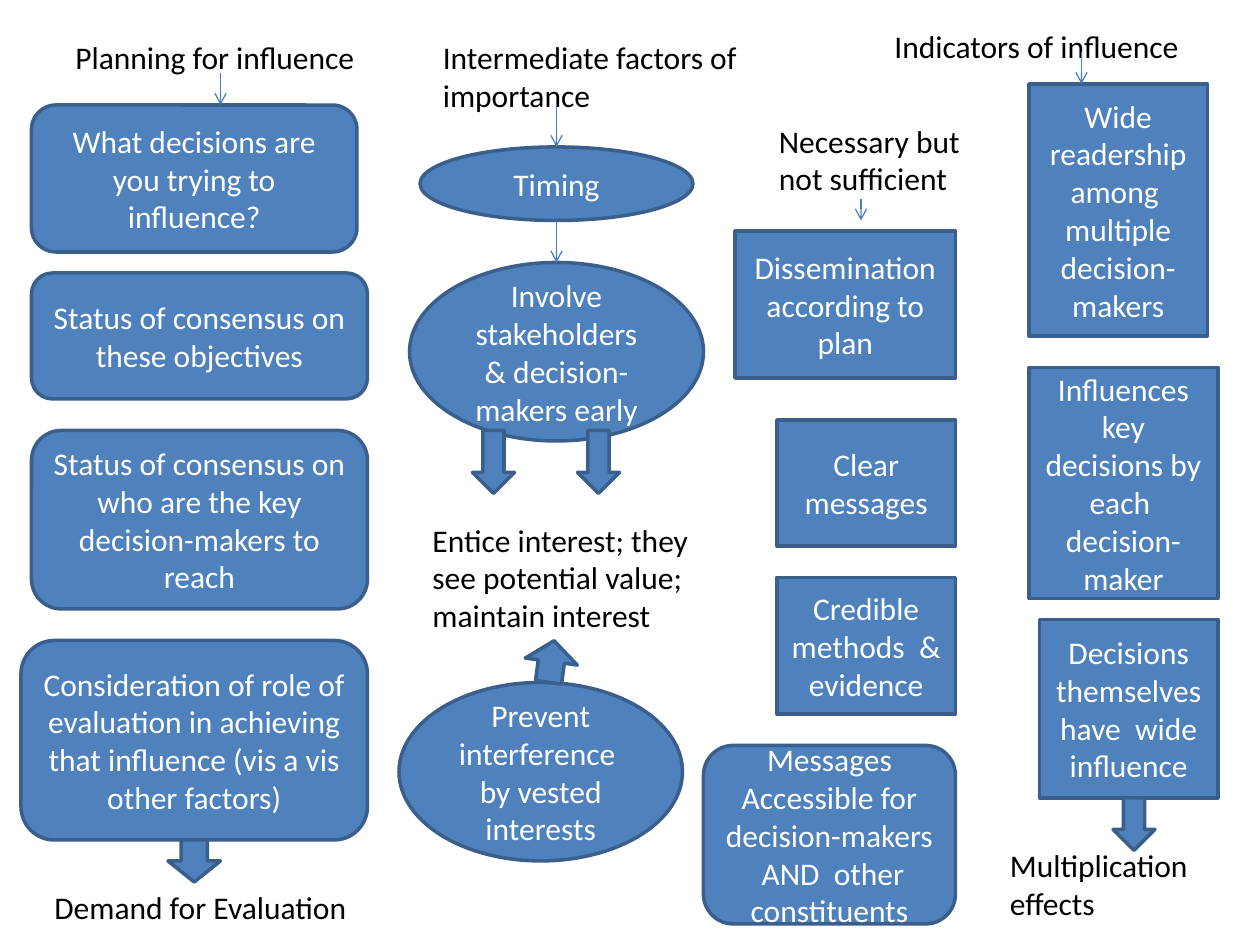
"""Build a one-slide map of how evaluations gain influence, from planning to indicators."""
from lxml.etree import SubElement
from pptx import Presentation
from pptx.dml.color import RGBColor
from pptx.enum.shapes import MSO_CONNECTOR, MSO_SHAPE
from pptx.enum.text import MSO_ANCHOR, MSO_AUTO_SIZE, PP_ALIGN
from pptx.oxml.ns import qn
from pptx.util import Pt

PX = 9525
FONT, TEXT_SIZE = "Calibri", Pt(18)
BLUE = RGBColor(0x4F, 0x81, 0xBD)
OUTLINE = RGBColor(0x3A, 0x5F, 0x8C)
ARROW_LINE = RGBColor(0x4B, 0x7E, 0xBC)
WHITE = RGBColor(0xFF, 0xFF, 0xFF)
BLACK = RGBColor(0, 0, 0)

RECT, ROUND, OVAL = MSO_SHAPE.RECTANGLE, MSO_SHAPE.ROUNDED_RECTANGLE, MSO_SHAPE.OVAL
FACTORS = [
    (ROUND, (24, 80, 248, 112), "What decisions are you trying to influence?"),
    (ROUND, (24, 208, 256, 96), "Status of consensus on these objectives"),
    (ROUND, (24, 328, 256, 136), "Status of consensus on who are the key decision-makers to reach"),
    (ROUND, (16, 488, 264, 152),
     "Consideration of role of evaluation in achieving that influence (vis a vis other factors)"),
    (OVAL, (320, 112, 208, 56), "Timing"),
    (OVAL, (312, 200, 224, 136), "Involve stakeholders & decision-makers early"),
    (OVAL, (304, 520, 216, 136), "Prevent interference  by vested interests"),
    (RECT, (560, 176, 168, 112), "Dissemination according to plan"),
    (RECT, (592, 320, 136, 96), "Clear messages"),
    (RECT, (592, 440, 136, 104), "Credible methods  & evidence"),
    (ROUND, (536, 568, 192, 136),
     "Messages Accessible for decision-makers  AND  other constituents"),
    (RECT, (784, 64, 136, 192), "Wide readership among  multiple decision-makers"),
    (RECT, (784, 280, 144, 176), "Influences key decisions by each  decision-maker"),
    (RECT, (792, 472, 136, 136), "Decisions themselves have  wide influence"),
]
LABELS = [
    ((48, 24, 248, 39), "Planning for influence"),
    ((32, 672, 328, 39), "Demand for Evaluation"),
    ((328, 24, 248, 68), "Intermediate factors of importance"),
    ((320, 392, 216, 97), "Entice interest; they see potential value; maintain interest"),
    ((584, 88, 168, 68), "Necessary but not sufficient"),
    ((672, 16, 264, 39), "Indicators of influence"),
    ((760, 640, 176, 68), "Multiplication effects"),
]
BLOCK_ARROWS = [
    ((128, 640, 40, 32), 0),
    ((360, 328, 32, 48), 0),
    ((440, 328, 32, 48), 0),
    ((400, 488, 40, 32), 187.6),
    ((848, 608, 32, 40), 0),
]
THIN_ARROWS = [
    (168, 56, 80, None),
    (424, 80, 112, "Timing"),
    (424, 168, 200, "Involve stakeholders & decision-makers early"),
    (656, 152, 168, None),
    (824, 40, 64, None),
]


def emu(lengths):
    return [length * PX for length in lengths]


def write(frame, wording, color, align):
    frame.word_wrap = True
    paragraph = frame.paragraphs[0]
    paragraph.alignment = align
    run = paragraph.add_run()
    run.text = wording
    run.font.name, run.font.size = FONT, TEXT_SIZE
    run.font.color.rgb = color


def add_block(slide, kind, place):
    block = slide.shapes.add_shape(kind, *emu(place))
    block.shadow.inherit = False
    block.fill.solid()
    block.fill.fore_color.rgb = BLUE
    block.line.color.rgb = OUTLINE
    block.line.width = Pt(2)
    return block


def add_factor(slide, kind, place, wording):
    factor = add_block(slide, kind, place)
    factor.text_frame.vertical_anchor = MSO_ANCHOR.MIDDLE
    write(factor.text_frame, wording, WHITE, PP_ALIGN.CENTER)
    return factor


def add_label(slide, place, wording):
    label = slide.shapes.add_textbox(*emu(place))
    write(label.text_frame, wording, BLACK, PP_ALIGN.LEFT)
    label.text_frame.auto_size = MSO_AUTO_SIZE.SHAPE_TO_FIT_TEXT


def add_thin_arrow(slide, x, top, bottom, target):
    arrow = slide.shapes.add_connector(MSO_CONNECTOR.STRAIGHT, *emu((x, top, x, bottom)))
    if target is not None:
        arrow.end_connect(target, 0)
    arrow.line.color.rgb = ARROW_LINE
    arrow.line.width = Pt(0.75)
    SubElement(arrow.line._get_or_add_ln(), qn("a:tailEnd"), type="arrow")
    SubElement(arrow._element.spPr, qn("a:effectLst"))


def main():
    deck = Presentation()
    deck.slide_width, deck.slide_height = emu((960, 720))
    slide = deck.slides.add_slide(deck.slide_layouts[6])
    factors = {wording: add_factor(slide, kind, place, wording)
               for kind, place, wording in FACTORS}
    for place, wording in LABELS:
        add_label(slide, place, wording)
    for place, turn in BLOCK_ARROWS:
        add_block(slide, MSO_SHAPE.DOWN_ARROW, place).rotation = turn
    for x, top, bottom, target in THIN_ARROWS:
        add_thin_arrow(slide, x, top, bottom, factors.get(target))
    deck.save("out.pptx")


if __name__ == "__main__":
    main()
